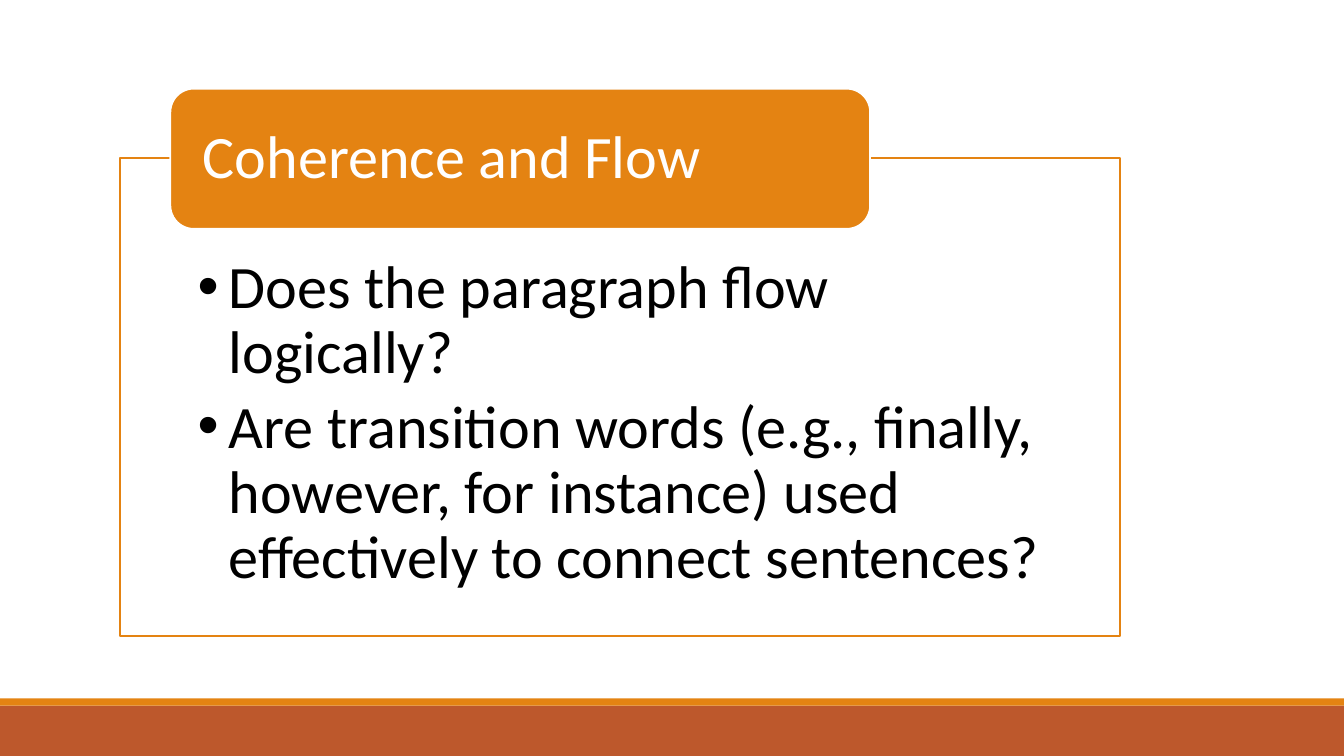
from lxml.etree import SubElement
from pptx import Presentation
from pptx.dml.color import RGBColor
from pptx.enum.shapes import MSO_SHAPE
from pptx.enum.text import MSO_ANCHOR, MSO_AUTO_SIZE, PP_ALIGN
from pptx.oxml.ns import qn
from pptx.util import Inches, Pt

ORANGE = RGBColor(0xE4, 0x83, 0x12)
RUST = RGBColor(0xBD, 0x58, 0x2C)
WHITE = RGBColor(0xFF, 0xFF, 0xFF)
BLACK = RGBColor(0x00, 0x00, 0x00)

QUESTIONS = [
    "Does the paragraph flow logically?",
    "Are transition words (e.g., finally, however, for instance) used "
    "effectively to connect sentences?",
]


def write_text(frame, lines, *, font, size, color, margins, anchor,
               space_after=0, bullet_indent=None):
    frame.word_wrap = True
    frame.auto_size = MSO_AUTO_SIZE.NONE
    frame.vertical_anchor = anchor
    (frame.margin_left, frame.margin_top,
     frame.margin_right, frame.margin_bottom) = map(Inches, margins)
    for index, line in enumerate(lines):
        paragraph = frame.add_paragraph() if index else frame.paragraphs[0]
        paragraph.alignment = PP_ALIGN.LEFT
        paragraph.line_spacing = 0.9
        paragraph.space_before = Pt(0)
        paragraph.space_after = Pt(space_after)
        run = paragraph.add_run()
        run.text = line
        run.font.name = font
        run.font.size = Pt(size)
        run.font.color.rgb = color
        if bullet_indent:
            properties = paragraph._p.get_or_add_pPr()
            properties.set("marL", str(Inches(bullet_indent)))
            properties.set("indent", str(-Inches(bullet_indent)))
            SubElement(properties, qn("a:buFont"), typeface="Arial")
            SubElement(properties, qn("a:buChar"), char="•")


class SlideBuilder:
    font = "Calibri"
    size = 43
    line_width = 1.25

    def __init__(self, presentation):
        self.slide = presentation.slides.add_slide(presentation.slide_layouts[5])

    def box(self, kind, bounds, fill, line=None, opacity=None):
        shape = self.slide.shapes.add_shape(kind, *map(Inches, bounds))
        shape.shadow.inherit = False
        shape.fill.solid()
        shape.fill.fore_color.rgb = fill
        if opacity is not None:
            color = shape._element.spPr.find(qn("a:solidFill"))[0]
            SubElement(color, qn("a:alpha"), val=str(opacity * 1000))
        if line is None:
            shape.line.fill.background()
        else:
            shape.line.color.rgb = line
            shape.line.width = Pt(self.line_width)
        return shape

    def bullets(self, shape, lines):
        write_text(shape.text_frame, lines, font=self.font, size=self.size,
                   color=BLACK, margins=(0.77, 0.98, 0.77, 0.33),
                   anchor=MSO_ANCHOR.TOP, space_after=6.5, bullet_indent=0.31)

    def title(self, text, bounds):
        heading = self.slide.shapes.title
        heading.left, heading.top, heading.width, heading.height = map(Inches, bounds)
        write_text(heading.text_frame, [text], font=self.font, size=self.size,
                   color=WHITE, margins=(0.26, 0, 0.26, 0),
                   anchor=MSO_ANCHOR.MIDDLE)
        self.slide.shapes._spTree.append(heading._element)


def main():
    presentation = Presentation()
    presentation.slide_width = Inches(13.33)
    presentation.slide_height = Inches(7.5)
    builder = SlideBuilder(presentation)

    builder.box(MSO_SHAPE.RECTANGLE, (0, 7, 13.33, 0.5), RUST)
    builder.box(MSO_SHAPE.RECTANGLE, (0, 6.93, 13.33, 0.07), ORANGE)
    question_panel = builder.box(MSO_SHAPE.RECTANGLE, (1.19, 1.57, 9.92, 4.74),
                                 WHITE, line=ORANGE, opacity=90)
    builder.bullets(question_panel, QUESTIONS)
    builder.box(MSO_SHAPE.ROUNDED_RECTANGLE, (1.69, 0.88, 6.94, 1.39),
                ORANGE, line=WHITE)
    builder.title("Coherence and Flow", (1.75, 0.95, 6.81, 1.25))

    presentation.save("out.pptx")


if __name__ == "__main__":
    main()
